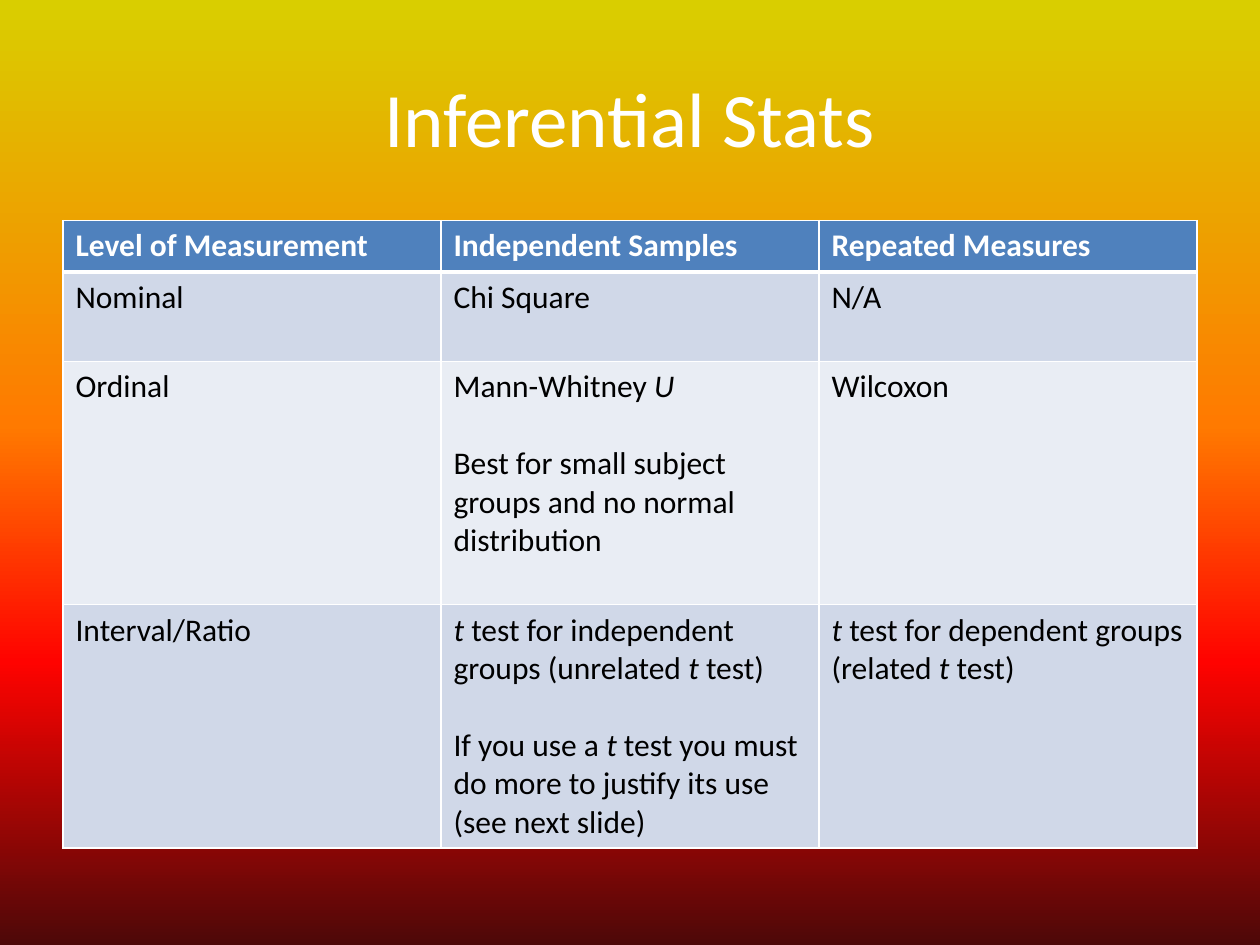
from lxml.etree import SubElement
from pptx import Presentation
from pptx.dml.color import RGBColor
from pptx.enum.text import MSO_ANCHOR, PP_ALIGN
from pptx.oxml.ns import qn
from pptx.util import Inches, Pt

# Content: *...* marks italics, each cell is a list of paragraphs
TITLE = "Inferential Stats"
ROWS = [
    [["Level of Measurement"], ["Independent Samples"], ["Repeated Measures"]],
    [["Nominal"], ["Chi Square"], ["N/A"]],
    [["Ordinal"],
     ["Mann-Whitney *U*",
      "Best for small subject groups and no normal distribution"],
     ["Wilcoxon"]],
    [["Interval/Ratio"],
     ["*t* test for independent groups (unrelated *t* test)",
      "If you use a *t* test you must do more to justify its use (see next slide)"],
     ["*t* test for dependent groups (related *t* test)"]],
]
ROW_HEIGHTS = [0.41, 0.71, 1.93, 1.93]
COL_WIDTH = 3
FONT = "Calibri"
COLORS = {"white": "FFFFFF", "black": "000000", "header": "4F81BD",
          "odd": "D0D8E8", "even": "E9EDF4"}
BACKGROUND = [(0, "D9CE00"), (45, "FF7A00"), (70, "FF0300"), (100, "4D0808")]


def rgb(name):
    return RGBColor.from_string(COLORS[name])


def add_text(p, text, size, color, bold=False):
    for i, part in enumerate(text.split("*")):
        if part:
            r = p.add_run()
            r.text = part
            r.font.name, r.font.size = FONT, Pt(size)
            r.font.bold, r.font.italic = bold, i % 2 == 1
            r.font.color.rgb = rgb(color)


def set_border(cell, side, width):
    ln = SubElement(cell._tc.get_or_add_tcPr(), qn(f"a:ln{side}"), w=str(Pt(width)))
    fill = SubElement(ln, qn("a:solidFill"))
    SubElement(fill, qn("a:srgbClr"), val=COLORS["white"])


def set_background(s):
    fill = s.background.fill
    fill.gradient()
    fill.gradient_angle = 270  # top to bottom
    stops = next(s.element.iter(qn("a:gsLst")))
    for stop in list(stops):
        stops.remove(stop)
    for pos, color in BACKGROUND:
        gs = SubElement(stops, qn("a:gs"), pos=str(pos * 1000))
        SubElement(gs, qn("a:srgbClr"), val=color)


def add_title(s):
    sp = s.shapes.title
    sp.left, sp.top, sp.width, sp.height = map(Inches, (0.5, 0.3, 9, 1.25))
    tf = sp.text_frame
    tf.vertical_anchor = MSO_ANCHOR.MIDDLE
    tf.paragraphs[0].alignment = PP_ALIGN.CENTER
    add_text(tf.paragraphs[0], TITLE, 44, "white")


def add_stats_table(s):
    cols = len(ROWS[0])
    table = s.shapes.add_table(len(ROWS), cols, Inches(0.5), Inches(1.75),
                               Inches(COL_WIDTH * cols), Inches(sum(ROW_HEIGHTS))).table
    for col in table.columns:
        col.width = Inches(COL_WIDTH)
    for i, row in enumerate(ROWS):
        table.rows[i].height = Inches(ROW_HEIGHTS[i])
        header = i == 0
        fill = "header" if header else "odd" if i % 2 else "even"
        for j, paragraphs in enumerate(row):
            cell = table.cell(i, j)
            # Heavier rule between header and body
            for side in "LRTB":
                heavy = (i, side) in ((0, "B"), (1, "T"))
                set_border(cell, side, 3 if heavy else 1)
            cell.fill.solid()
            cell.fill.fore_color.rgb = rgb(fill)
            tf = cell.text_frame
            for k, text in enumerate(paragraphs):
                p = tf.add_paragraph() if k else tf.paragraphs[0]
                if k:
                    p.space_before = Pt(22)
                add_text(p, text, 18, "white" if header else "black", header)


def main():
    prs = Presentation()
    prs.slide_width, prs.slide_height = Inches(10), Inches(7.5)
    s = prs.slides.add_slide(prs.slide_layouts[5])  # title only
    set_background(s)
    add_title(s)
    add_stats_table(s)
    prs.save("out.pptx")


if __name__ == "__main__":
    main()
